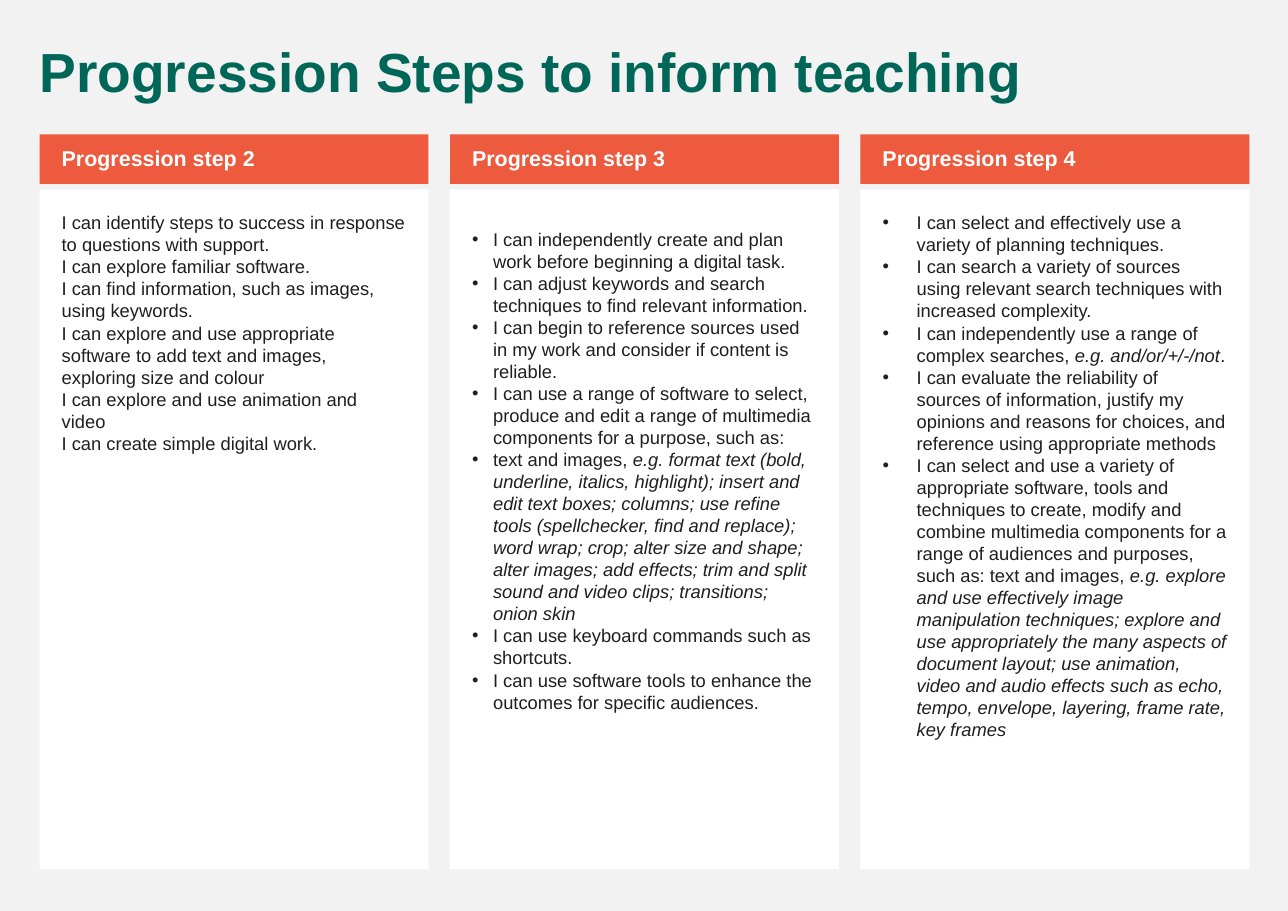
from dataclasses import dataclass

from lxml import etree
from pptx import Presentation
from pptx import util as u
from pptx.dml.color import RGBColor
from pptx.enum import shapes, text
from pptx.oxml import ns


@dataclass(frozen=True)
class Theme:
    font: str = "Arial"
    page: str = "F2F2F2"
    panel: str = "FFFFFF"
    band: str = "ED5A3E"
    title: str = "006758"
    ink: str = "1F1F1F"
    band_ink: str = "FFFFFF"
    title_size: int = 36
    band_size: int = 14
    list_size: int = 12


THEME = Theme()
LEFT, RIGHT, COLUMN_WIDTH = 0.36, 11.34, 3.53
PITCH = (RIGHT - LEFT - COLUMN_WIDTH) / 2
COMPARISON_LAYOUT = 4

STEPS = [
    dict(heading="Progression step 2", indent=0, top_inset=0.2, statements=[
        ["I can identify steps to success in response to questions with support."],
        ["I can explore familiar software."],
        ["I can find information, such as images, using keywords."],
        ["I can explore and use appropriate software to add text and images, exploring size and colour"],
        ["I can explore and use animation and video"],
        ["I can create simple digital work."],
    ]),
    dict(heading="Progression step 3", indent=0.19, top_inset=0.35, statements=[
        ["I can independently create and plan work before beginning a digital task."],
        ["I can adjust keywords and search techniques to find relevant information."],
        ["I can begin to reference sources used in my work and consider if content is reliable."],
        ["I can use a range of software to select, produce and edit a range of multimedia "
         "components for a purpose, such as:"],
        ["text and images, ",
         "e.g. format text (bold, underline, italics, highlight); insert and edit text boxes; "
         "columns; use refine tools (spellchecker, find and replace); word wrap; crop; alter size "
         "and shape; alter images; add effects; trim and split sound and video clips; "
         "transitions; onion skin"],
        ["I can use keyboard commands such as shortcuts."],
        ["I can use software tools to enhance the outcomes for specific audiences."],
    ]),
    dict(heading="Progression step 4", indent=0.31, top_inset=0.2, statements=[
        ["I can select and effectively use a variety of planning techniques."],
        ["I can search a variety of sources using relevant search techniques with increased complexity."],
        ["I can independently use a range of complex searches, ", "e.g. and/or/+/-/not", "."],
        ["I can evaluate the reliability of sources of information, justify my opinions and "
         "reasons for choices, and reference using appropriate methods"],
        ["I can select and use a variety of appropriate software, tools and techniques to create, "
         "modify and combine multimedia components for a range of audiences and purposes, "
         "such as: text and images, ",
         "e.g. explore and use effectively image manipulation techniques; explore and use "
         "appropriately the many aspects of document layout; use animation, video and audio "
         "effects such as echo, tempo, envelope, layering, frame rate, key frames"],
    ]),
]


def place(shape, left, top, width, height):
    shape.left, shape.top = u.Inches(left), u.Inches(top)
    shape.width, shape.height = u.Inches(width), u.Inches(height)


def paint(fill, colour):
    fill.solid()
    fill.fore_color.rgb = RGBColor.from_string(colour)


def set_frame(frame, anchor, left, top, right, bottom):
    frame.word_wrap = True
    frame.auto_size = text.MSO_AUTO_SIZE.NONE
    frame.vertical_anchor = anchor
    frame.margin_left, frame.margin_top = u.Inches(left), u.Inches(top)
    frame.margin_right, frame.margin_bottom = u.Inches(right), u.Inches(bottom)


def add_run(paragraph, words, size, colour, bold=False, italic=False):
    run = paragraph.add_run()
    run.text = words
    run.font.name = THEME.font
    run.font.size = u.Pt(size)
    run.font.bold, run.font.italic = bold, italic
    run.font.color.rgb = RGBColor.from_string(colour)


def set_bullet(paragraph, indent):
    properties = paragraph._p.get_or_add_pPr()
    properties.set("marL", str(u.Inches(indent)))
    properties.set("indent", str(-u.Inches(indent)))
    if indent:
        etree.SubElement(properties, ns.qn("a:buFont"), typeface=THEME.font)
        etree.SubElement(properties, ns.qn("a:buChar"), char="•")
    else:
        etree.SubElement(properties, ns.qn("a:buNone"))


def write_heading(frame, words, size, colour):
    paragraph = frame.paragraphs[0]
    paragraph.alignment = text.PP_ALIGN.LEFT
    paragraph.line_spacing = 0.9
    add_run(paragraph, words, size, colour, bold=True)


def fill_title(title):
    place(title, 0.26, 0.36, 11.08, 0.65)
    set_frame(title.text_frame, text.MSO_ANCHOR.TOP, 0.1, 0.05, 0.1, 0.05)
    write_heading(title.text_frame, "Progression Steps to inform teaching",
                  THEME.title_size, THEME.title)


def add_band(slide, left, heading):
    band = slide.shapes.add_shape(
        shapes.MSO_SHAPE.RECTANGLE, u.Inches(left), u.Inches(1.22),
        u.Inches(COLUMN_WIDTH), u.Inches(0.45))
    band.shadow.inherit = False
    paint(band.fill, THEME.band)
    band.line.fill.background()
    set_frame(band.text_frame, text.MSO_ANCHOR.MIDDLE, 0.2, 0.05, 0.1, 0.05)
    write_heading(band.text_frame, heading, THEME.band_size, THEME.band_ink)


def fill_panel(panel, left, step):
    place(panel, left, 1.72, COLUMN_WIDTH, 6.17)
    paint(panel.fill, THEME.panel)
    frame = panel.text_frame
    set_frame(frame, text.MSO_ANCHOR.TOP, 0.2, step["top_inset"], 0.2, 0.2)
    for number, statement in enumerate(step["statements"]):
        paragraph = frame.add_paragraph() if number else frame.paragraphs[0]
        paragraph.alignment = text.PP_ALIGN.LEFT
        paragraph.line_spacing = 1.0
        paragraph.space_before = paragraph.space_after = u.Pt(0)
        set_bullet(paragraph, step["indent"])
        for part, words in enumerate(statement):
            add_run(paragraph, words, THEME.list_size, THEME.ink, italic=part == 1)


def main():
    deck = Presentation()
    deck.slide_width, deck.slide_height = u.Inches(11.69), u.Inches(8.27)
    slide = deck.slides.add_slide(deck.slide_layouts[COMPARISON_LAYOUT])
    paint(slide.background.fill, THEME.page)
    fill_title(slide.shapes.title)
    panels = [holder for holder in slide.placeholders
              if holder.placeholder_format.idx in (1, 2, 3, 4)]
    spare = panels.pop()
    spare.element.getparent().remove(spare.element)
    for column, (panel, step) in enumerate(zip(panels, STEPS)):
        left = LEFT + column * PITCH
        fill_panel(panel, left, step)
        add_band(slide, left, step["heading"])
    deck.save("out.pptx")


if __name__ == "__main__":
    main()
